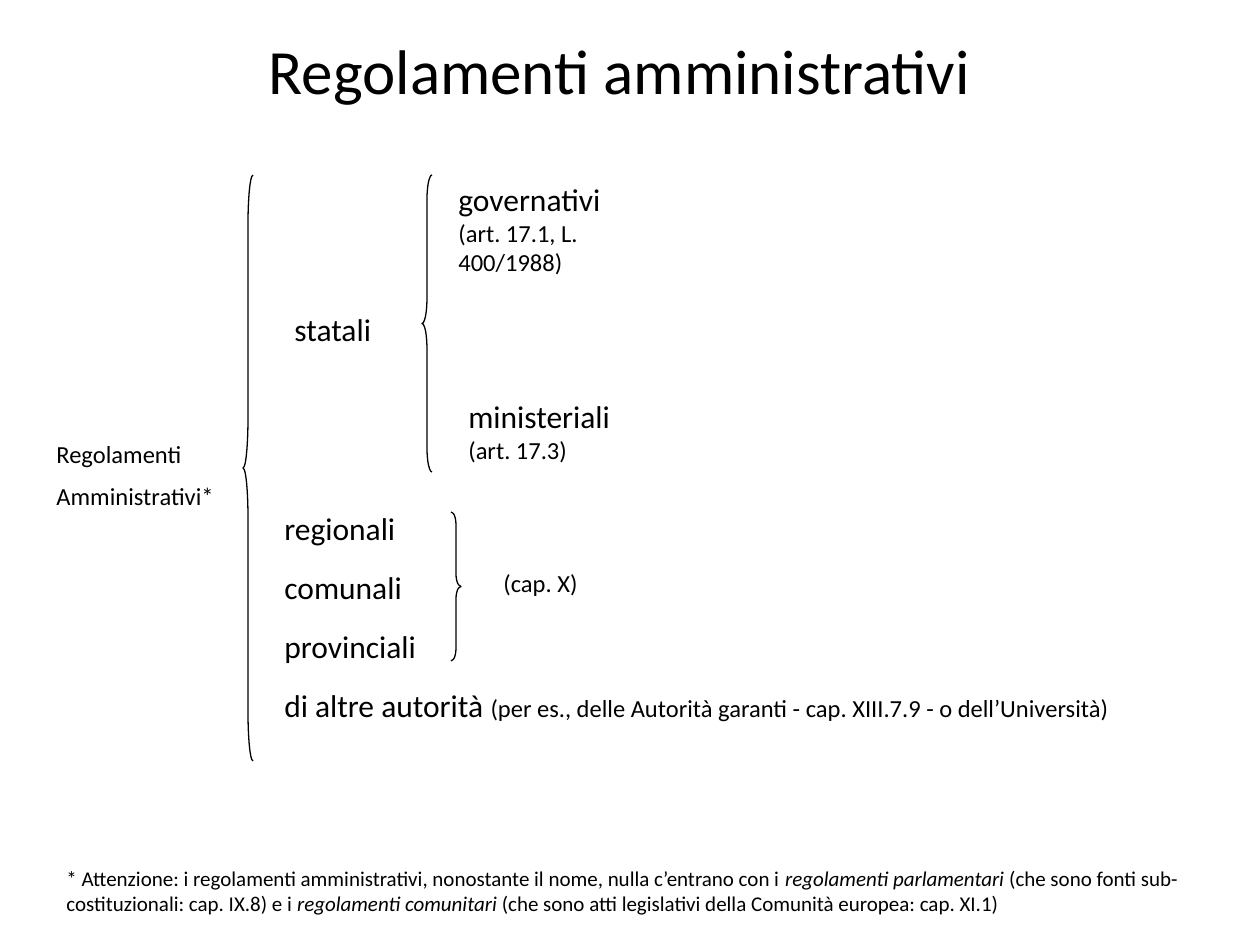
"""Builds a slide that classifies administrative regulations with braces."""
import pptx
import pptx.util
import pptx.dml.color
import pptx.enum.shapes
import pptx.enum.text

SHAPES = pptx.enum.shapes.MSO_SHAPE
BLACK = pptx.dml.color.RGBColor(0, 0, 0)
WHITE = pptx.dml.color.RGBColor(255, 255, 255)
FONT = "Calibri"
PX_PER_INCH = 126
LARGE, MEDIUM, SMALL = 18, 14, 12

TITLE = ("Regolamenti amministrativi", (84, 35, 1071, 69))
LABELS = [
    ((44, 433, 198, 86), [[("Regolamenti", MEDIUM)], [("Amministrativi*", MEDIUM)]]),
    ((282, 304, 129, 50), [[("statali", LARGE)]]),
    ((491, 562, 476, 42), [[("(cap. X)", MEDIUM)]]),
    ((446, 174, 189, 166), [[("governativi ", LARGE), ("(art. 17.1, L. 400/1988)", MEDIUM)]]),
    ((456, 391, 179, 79), [[("ministeriali ", LARGE), ("(art. 17.3)", MEDIUM)]]),
    ((54, 859, 1152, 63), [[
        ("* Attenzione: i regolamenti amministrativi, nonostante il nome, nulla c’entrano con i ", SMALL),
        ("regolamenti parlamentari", SMALL, True),
        (" (che sono fonti sub-costituzionali: cap. IX.8) e i ", SMALL),
        ("regolamenti comunitari", SMALL, True),
        (" (che sono atti legislativi della Comunità europea: cap. XI.1)", SMALL),
    ]]),
]
LOCAL_LEFT, LOCAL_TOP, LOCAL_STEP, LOCAL_HEIGHT = 272, 503, 59, 50
LOCAL = [
    (159, [("regionali", LARGE)]),
    (159, [("comunali", LARGE)]),
    (169, [("provinciali", LARGE)]),
    (942, [("di altre autorità ", LARGE),
           ("(per es., delle Autorità garanti - cap. XIII.7.9 - o dell’Università)", MEDIUM)]),
]
BRACE_WIDTH = 10
BRACES = [
    (SHAPES.LEFT_BRACE, 243, 175, 586),
    (SHAPES.LEFT_BRACE, 422, 175, 297),
    (SHAPES.RIGHT_BRACE, 451, 512, 149),
]


def px(n):
    return pptx.util.Emu(round(n * 914400 / PX_PER_INCH))


def add_run(p, text, size=LARGE, italic=False):
    r = p.add_run()
    r.text = text
    r.font.name = FONT
    r.font.size = pptx.util.Pt(size)
    r.font.italic = italic
    r.font.color.rgb = BLACK


def add_label(slide, box, paragraphs):
    tf = slide.shapes.add_textbox(*map(px, box)).text_frame
    tf.word_wrap = True
    tf.auto_size = pptx.enum.text.MSO_AUTO_SIZE.SHAPE_TO_FIT_TEXT
    for i, runs in enumerate(paragraphs):
        p = tf.add_paragraph() if i else tf.paragraphs[0]
        if i:
            p.space_before = pptx.util.Pt(runs[0][1] / 2)
        for run in runs:
            add_run(p, *run)


def add_brace(slide, kind, left, top, height):
    sp = slide.shapes.add_shape(kind, px(left), px(top), px(BRACE_WIDTH), px(height))
    sp.adjustments[0] = height / BRACE_WIDTH / 12
    sp.shadow.inherit = False
    sp.fill.background()
    sp.line.color.rgb = BLACK
    sp.line.width = pptx.util.Pt(0.75)


def main():
    prs = pptx.Presentation()
    prs.slide_width, prs.slide_height = px(1260), px(945)
    slide = prs.slides.add_slide(prs.slide_layouts[5])
    slide.background.fill.solid()
    slide.background.fill.fore_color.rgb = WHITE

    text, box = TITLE
    title = slide.shapes.title
    title.left, title.top, title.width, title.height = map(px, box)
    tf = title.text_frame
    tf.vertical_anchor = pptx.enum.text.MSO_ANCHOR.MIDDLE
    tf.paragraphs[0].alignment = pptx.enum.text.PP_ALIGN.CENTER
    add_run(tf.paragraphs[0], text, size=36)

    for brace in BRACES:
        add_brace(slide, *brace)
    for box, paragraphs in LABELS:
        add_label(slide, box, paragraphs)
    for i, (width, runs) in enumerate(LOCAL):
        top = LOCAL_TOP + i * LOCAL_STEP
        add_label(slide, (LOCAL_LEFT, top, width, LOCAL_HEIGHT), [runs])
    prs.save("out.pptx")


if __name__ == "__main__":
    main()
